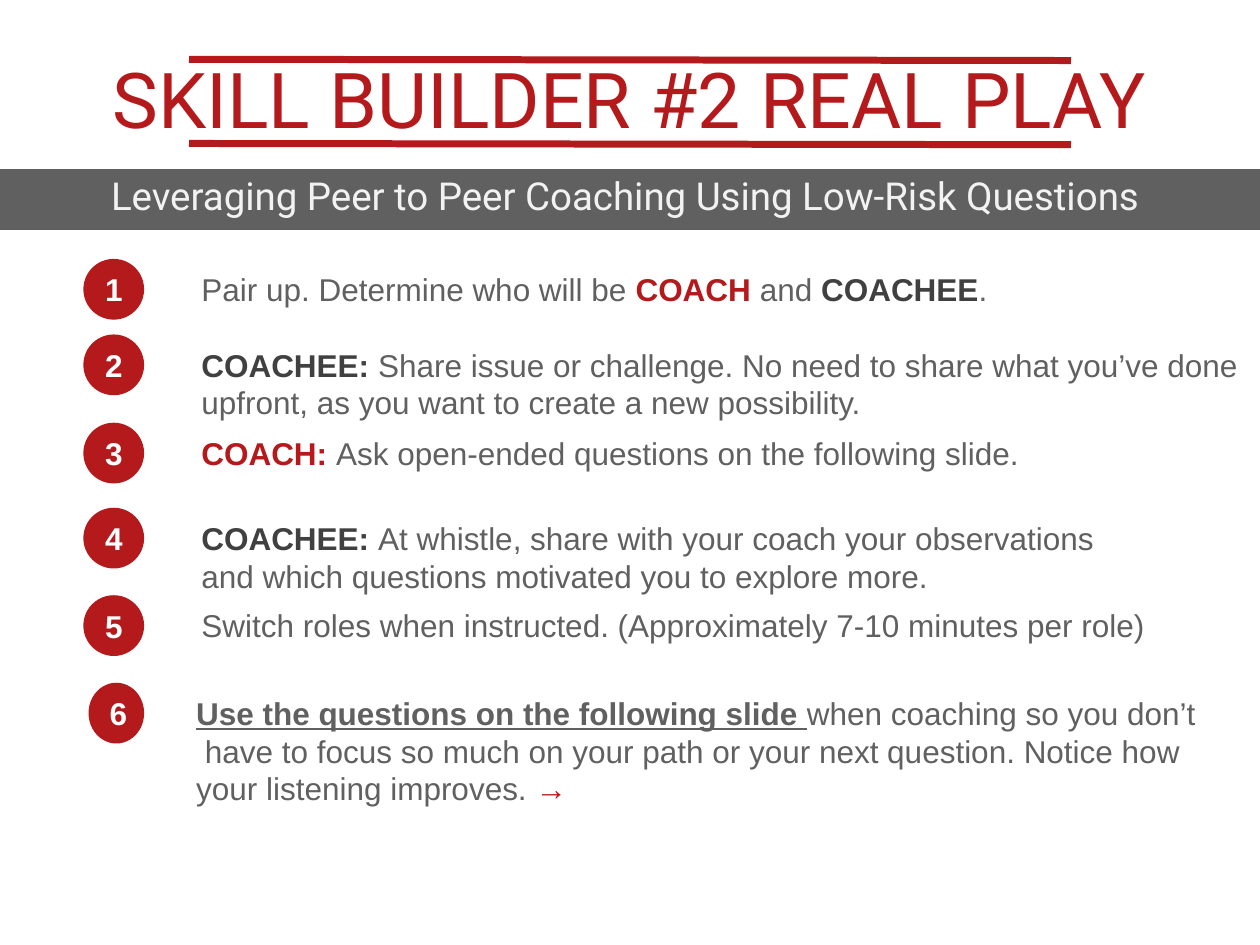
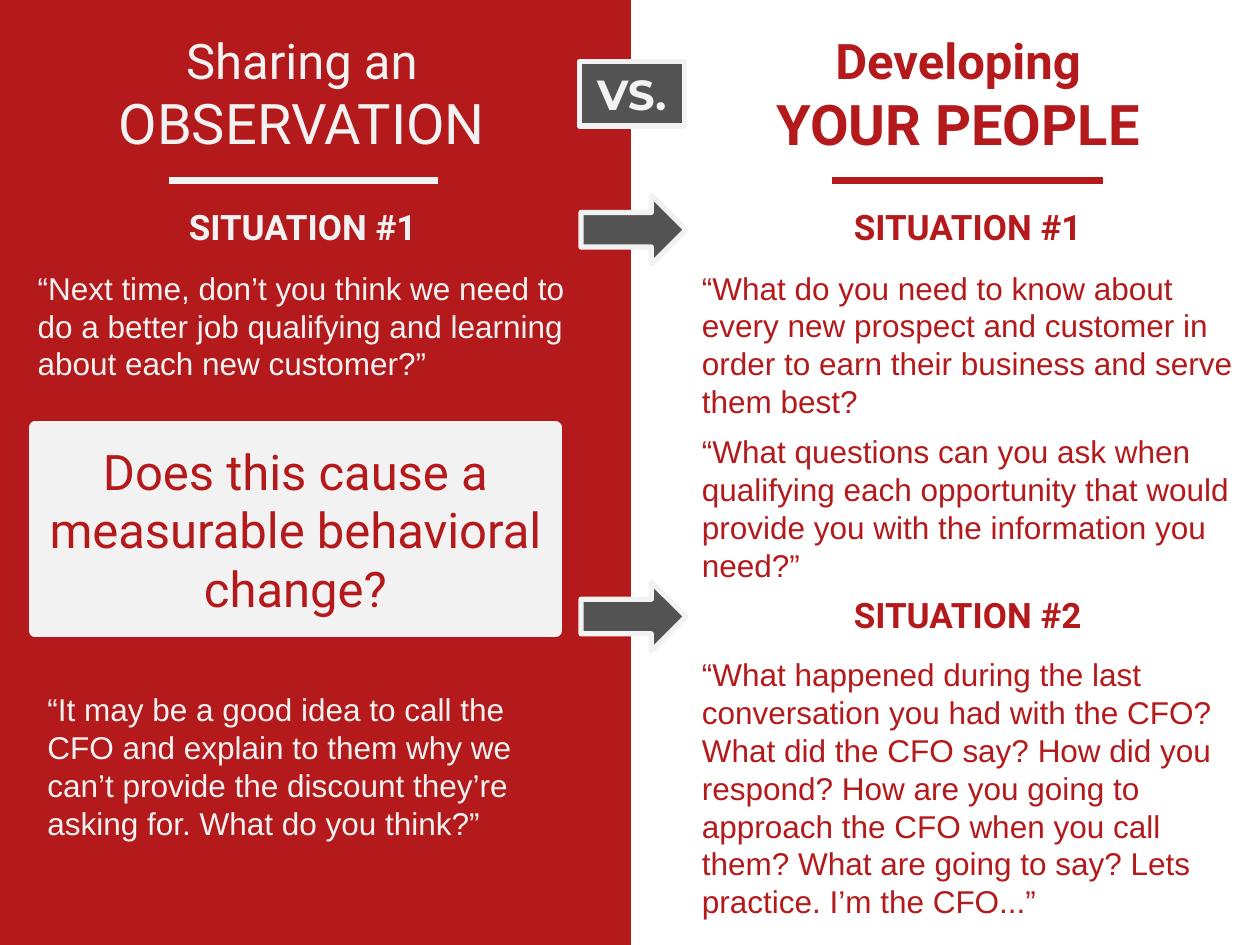
from pptx import Presentation
from pptx.dml.color import RGBColor
from pptx.enum.shapes import MSO_CONNECTOR, MSO_SHAPE
from pptx.enum.text import MSO_ANCHOR, MSO_AUTO_SIZE, PP_ALIGN
from pptx.oxml.ns import qn
from pptx.util import Pt
from lxml import etree

COLOURS = {
    name: RGBColor.from_string(code)
    for name, code in {
        "red": "B41A1B",
        "grey": "606060",
        "dark": "404040",
        "charcoal": "535353",
        "light": "F2F2F2",
        "white": "FFFFFF",
    }.items()
}
HEADING, BODY, BADGE = "Roboto", "Arial", "Montserrat"
CENTER, LEFT = PP_ALIGN.CENTER, PP_ALIGN.LEFT


def write(frame, lines, font, size, colour, bold=False, align=LEFT, anchor=MSO_ANCHOR.TOP):
    frame.word_wrap = True
    frame.auto_size = MSO_AUTO_SIZE.NONE
    frame.vertical_anchor = anchor
    for index, line in enumerate(lines):
        para = frame.add_paragraph() if index else frame.paragraphs[0]
        para.alignment = align
        para.font.name = font
        para.font.size = Pt(size)
        para.font.bold = bold
        para.font.color.rgb = COLOURS[colour]
        for text, tint, underline in [(line, None, False)] if isinstance(line, str) else line:
            span = para.add_run()
            span.text = text
            if tint:
                span.font.bold = True
                span.font.color.rgb = COLOURS[tint]
            if underline:
                span.font.underline = True


def add_shape(page, kind, place, fill, outline, weight=0.75):
    shape = page.shapes.add_shape(kind, *map(Pt, place))
    shape.shadow.inherit = False
    shape.fill.solid()
    shape.fill.fore_color.rgb = COLOURS[fill]
    shape.line.color.rgb = COLOURS[outline]
    shape.line.width = Pt(weight)
    return shape


deck = Presentation()
deck.slide_width, deck.slide_height = Pt(720), Pt(540)
title_only = deck.slide_layouts[5]

practice = deck.slides.add_slide(title_only)
title = practice.shapes.title
title.left, title.top, title.width, title.height = map(Pt, (0, 26, 720, 60.5))
write(title.text_frame, ["SKILL BUILDER #2 REAL PLAY"], HEADING, 44, "red", align=CENTER)

add_shape(practice, MSO_SHAPE.RECTANGLE, (0, 97, 720, 34), "grey", "grey")
subtitle = practice.shapes.add_textbox(Pt(0), Pt(94.5), Pt(720), Pt(34))
write(subtitle.text_frame, ["Leveraging Peer to Peer Coaching Using Low-Risk Questions "],
      HEADING, 22, "light", align=CENTER)

steps = [
    (148.3, [[("Pair up. Determine who will be ", None, False), ("COACH", "red", False),
              (" and ", None, False), ("COACHEE", "dark", False), (".", None, False)]]),
    (191.5, [[("COACHEE: ", "dark", False),
              ("Share issue or challenge. No need to share what you’ve done", None, False)],
             "upfront, as you want to create a new possibility."]),
    (241.9, [[("COACH: ", "red", False),
              ("Ask open-ended questions on the following slide.", None, False)]]),
    (290.5, [[("COACHEE: ", "dark", False),
              ("At whistle, share with your coach your observations", None, False)],
             "and which questions motivated you to explore more."]),
    (340.5, ["Switch roles when instructed. (Approximately 7-10 minutes per role)"]),
    (390.5, [[("Use the questions on the following slide ", "grey", True),
              ("when coaching so you don’t", None, False)],
             " have to focus so much on your path or your next question. Notice how",
             [("your listening improves. ", None, False), ("→", "red", False)]]),
]
for number, (top, lines) in enumerate(steps, 1):
    last = number == len(steps)
    circle_left, text_left = (51, 105) if last else (48, 108)
    circle = add_shape(practice, MSO_SHAPE.OVAL,
                       (circle_left, top, 82 - circle_left, 34), "red", "red")
    write(circle.text_frame, [str(number)], BODY, 18, "white", True, CENTER, MSO_ANCHOR.MIDDLE)
    step = practice.shapes.add_textbox(Pt(text_left), Pt(top + 2.4), Pt(612), Pt(7 + 22 * len(lines)))
    write(step.text_frame, lines, BODY, 18, "grey")

contrast = deck.slides.add_slide(title_only)
add_shape(contrast, MSO_SHAPE.RECTANGLE, (0, 0, 360, 540), "red", "red")

title = contrast.shapes.title
title.left, title.top, title.width, title.height = map(Pt, (425, 13.7, 245, 80))
observation = contrast.shapes.add_textbox(Pt(50), Pt(13.7), Pt(245), Pt(80))
for heading, lines, colour, bold in [
    (title, ["Developing", "YOUR PEOPLE"], "red", True),
    (observation, ["Sharing an", "OBSERVATION"], "light", False),
]:
    write(heading.text_frame, lines, HEADING, 32, colour, bold, CENTER)
    heading.text_frame.paragraphs[0].font.size = Pt(28)

for left, top, text, colour in [
    (96.5, 113.8, "SITUATION #1", "light"),
    (476.5, 113.8, "SITUATION #1", "red"),
    (476.5, 335.5, "SITUATION #2", "red"),
]:
    label = contrast.shapes.add_textbox(Pt(left), Pt(top), Pt(153), Pt(31.5))
    write(label.text_frame, [text], HEADING, 20, colour, True, CENTER)

for left, top, height, colour, text in [
    (14.4, 150, 73, "light",
     "“Next time, don’t you think we need to do a better job qualifying and learning "
     "about each new customer?”"),
    (20, 391, 94, "light",
     "“It may be a good idea to call the CFO and explain to them why we can’t provide "
     "the discount they’re asking for. What do you think?”"),
    (394, 150, 94, "red",
     "“What do you need to know about every new prospect and customer in order to earn "
     "their business and serve them best?"),
    (394, 243.5, 94, "red",
     "“What questions can you ask when qualifying each opportunity that would provide "
     "you with the information you need?”"),
    (394, 371, 160, "red",
     "“What happened during the last conversation you had with the CFO? What did the CFO "
     "say? How did you respond? How are you going to approach the CFO when you call them? "
     "What are going to say? Lets practice. I’m the CFO...”"),
]:
    quote = contrast.shapes.add_textbox(Pt(left), Pt(top), Pt(317.5), Pt(height))
    write(quote.text_frame, [text], BODY, 18, colour)

versus = add_shape(contrast, MSO_SHAPE.RECTANGLE, (331, 35.3, 60, 36.7), "charcoal", "light", 3)
write(versus.text_frame, ["VS."], BADGE, 24, "light", True, CENTER, MSO_ANCHOR.MIDDLE)
for top in (111.5, 332.5):
    add_shape(contrast, MSO_SHAPE.RIGHT_ARROW, (332, top, 60, 39.6), "charcoal", "light", 3)
question = add_shape(contrast, MSO_SHAPE.RECTANGLE, (20, 244.5, 297.5, 116), "light", "light", 7.25)
write(question.text_frame, ["Does this cause a measurable behavioral change?"],
      HEADING, 28, "red", align=CENTER, anchor=MSO_ANCHOR.MIDDLE)

for page, left, right, start, end, colour in [
    (practice, 108, 612, 33.9, 34.6, "red"),
    (practice, 108, 612, 82, 82.7, "red"),
    (contrast, 96.5, 250.5, 103, 103, "light"),
    (contrast, 475.5, 630, 103, 103, "red"),
]:
    rule = page.shapes.add_connector(MSO_CONNECTOR.STRAIGHT, Pt(left), Pt(start), Pt(right), Pt(end))
    rule.line.color.rgb = COLOURS[colour]
    rule.line.width = Pt(4)
    etree.SubElement(rule.element.spPr, qn("a:effectLst"))

deck.save("out.pptx")
